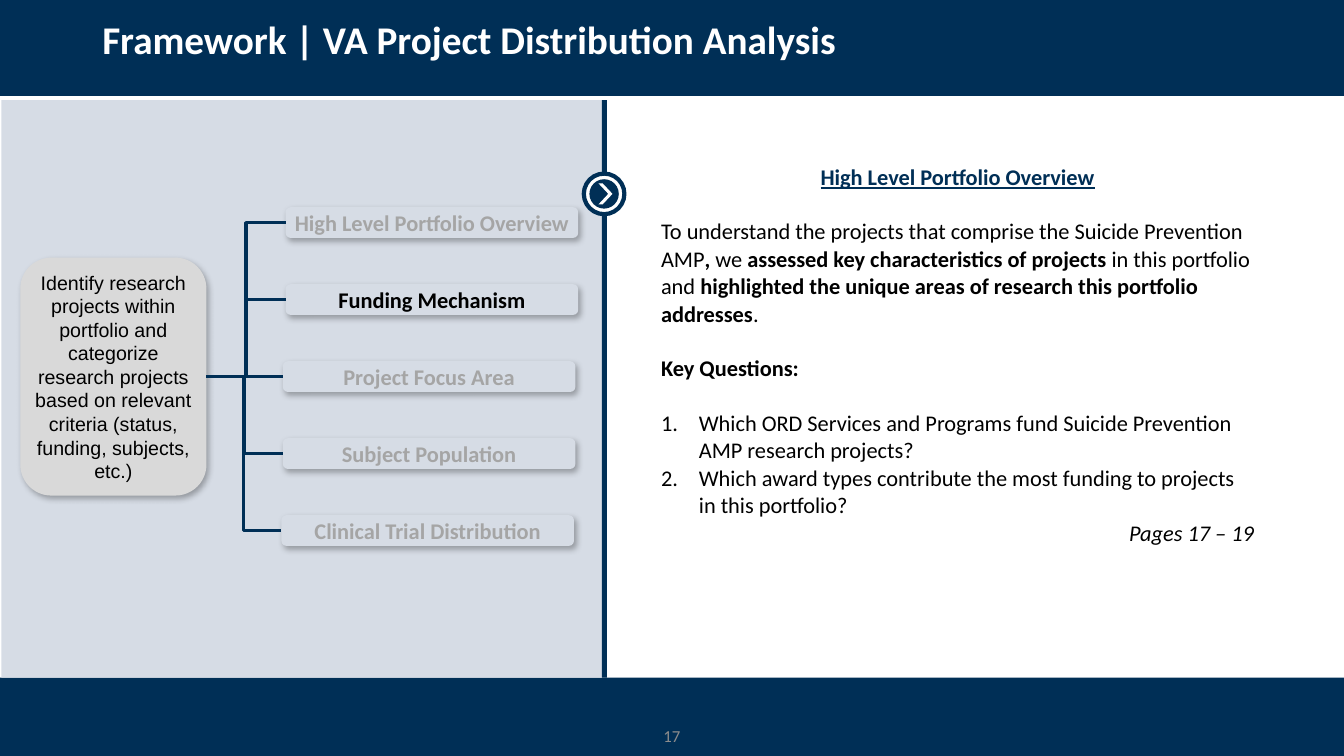
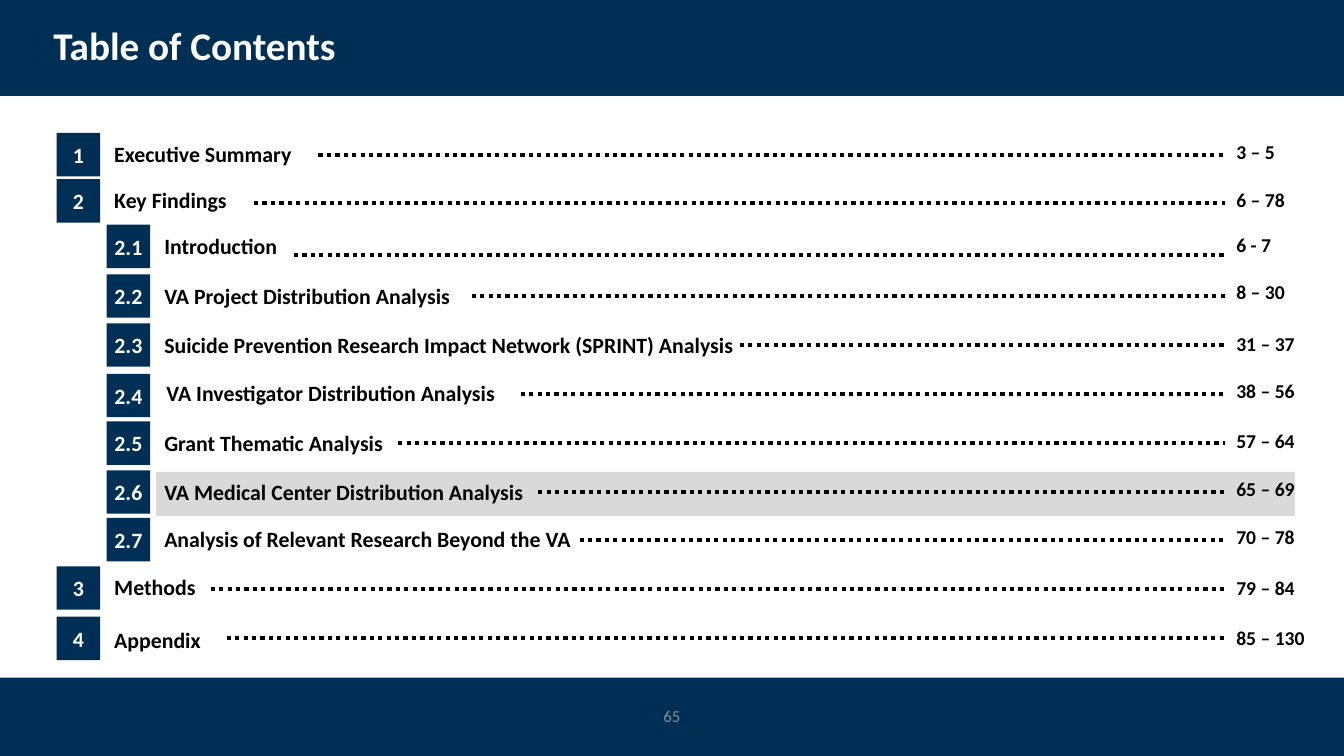
from dataclasses import dataclass
from typing import NamedTuple

from lxml.etree import SubElement
from pptx import Presentation
from pptx.dml.color import RGBColor as RGB
from pptx.enum.dml import MSO_LINE as Dash
from pptx.enum.shapes import MSO_CONNECTOR as Link, MSO_SHAPE as Kind
from pptx.enum.text import MSO_ANCHOR as Anchor, PP_ALIGN as Align
from pptx.oxml.ns import qn
from pptx.util import Pt


@dataclass(frozen=True)
class Theme:
    navy: str = "002F56"
    pale: str = "D6DCE5"
    gray: str = "D9D9D9"
    faded: str = "A5A5A5"
    muted: str = "8C8C8C"
    white: str = "FFFFFF"
    black: str = "000000"
    font: str = "Calibri"
    plain: str = "Arial"
    title: float = 28
    body: float = 16
    entry: float = 15.6
    note: float = 14
    foot: float = 12


class Row(NamedTuple):
    """One contents line; the last four values are offsets from its top."""
    mark: str
    label: str
    pages: str
    top: float
    start: float
    rule: float = 15.5
    page: float = 1.5
    dx: float = 0
    dy: float = 0


ROWS = [
    Row("1", "Executive Summary", "3 – 5", 95, 227.5),
    Row("2", "Key Findings", "6 – 78", 128, 181.5, 17, 2.5),
    Row("2.1", "Introduction", "6 - 7", 160.5, 210, 21.5, 2.5),
    Row("2.2", "VA Project Distribution Analysis", "8 – 30", 196, 337, page=0.5),
    Row("2.3", "Suicide Prevention Research Impact Network (SPRINT) Analysis",
        "31 – 37", 231, 528.5, page=2.5),
    Row("2.4", "VA Investigator Distribution Analysis", "38 – 56", 267, 372,
        14.5, 0, 1.5, -1.5),
    Row("2.5", "Grant Thematic Analysis", "57 – 64", 301, 284.5),
    Row("2.6", "VA Medical Center Distribution Analysis", "65 – 69", 336, 384.5,
        page=1),
    Row("2.7", "Analysis of Relevant Research Beyond the VA", "70 – 78", 370, 414),
    Row("3", "Methods", "79 – 84", 404.5, 150.5, 16, 3.5),
    Row("4", "Appendix", "85 – 130", 440.5, 162, dy=1.5, page=3),
]

TOPICS = [
    ("High Level Portfolio Overview", 204),
    ("Funding Mechanism", 204),
    ("Project Focus Area", 202),
    ("Subject Population", 202),
    ("Clinical Trial Distribution", 201),
]
ACTIVE = "Funding Mechanism"

INTRO = [
    ("To understand the projects that comprise the Suicide Prevention AMP", False),
    (", ", True),
    ("we ", False),
    ("assessed key characteristics of projects ", True),
    ("in this portfolio and ", False),
    ("highlighted the unique areas of research this portfolio addresses", True),
    (".", False),
]
ASKS = [
    "Which ORD Services and Programs fund Suicide Prevention AMP research projects?",
    "Which award types contribute the most funding to projects in this portfolio?",
]


class Deck:
    def __init__(self, theme):
        self.theme = theme
        self.file = Presentation()
        self.file.slide_width, self.file.slide_height = Pt(960), Pt(540)

    def start(self, title, left, top, number, foot):
        """Add a slide with its bands, title and page number."""
        t = self.theme
        self.slide = self.file.slides.add_slide(self.file.slide_layouts[6])
        self.shape(0, 0, 960, 68.5, t.navy)
        self.shape(0, 484, 960, 56, t.navy)
        para = self.text(left, top, 828, 53, title, t.title, t.white, bold=True,
                         anchor=Anchor.MIDDLE)
        para.line_spacing = 0.9
        self.text(372, foot, 216, 29, number, t.foot, t.muted,
                  align=Align.CENTER, anchor=Anchor.MIDDLE)

    def shape(self, x, y, w, h, fill, kind=Kind.RECTANGLE, edge=None):
        item = self.slide.shapes.add_shape(kind, Pt(x), Pt(y), Pt(w), Pt(h))
        item.shadow.inherit = False
        item.fill.solid()
        item.fill.fore_color.rgb = RGB.from_string(fill)
        if edge:
            item.line.color.rgb = RGB.from_string(edge)
            item.line.width = Pt(3)
        else:
            item.line.fill.background()
        return item

    def card(self, x, y, w, h, fill):
        """Add a rounded box with a soft shadow."""
        item = self.shape(x, y, w, h, fill, Kind.ROUNDED_RECTANGLE)
        effects = item._element.spPr.find(qn("a:effectLst"))
        shade = SubElement(effects, qn("a:outerShdw"), blurRad=str(Pt(4.5)),
                           dist=str(Pt(2.6)), dir=str(53 * 60000), rotWithShape="0")
        tint = SubElement(shade, qn("a:srgbClr"), val=self.theme.black)
        SubElement(tint, qn("a:alpha"), val="30000")
        return item

    def run(self, para, text, size, color, bold=False, font=None):
        run = para.add_run()
        run.text = text
        run.font.name = font or self.theme.font
        run.font.size = Pt(size)
        run.font.bold = bold
        run.font.color.rgb = RGB.from_string(color)
        return run

    def label(self, item, text, size, color, bold=False, font=None,
              align=Align.CENTER, anchor=Anchor.MIDDLE, inset=None, wrap=True):
        """Put one paragraph into a shape."""
        frame = item.text_frame
        frame.word_wrap = wrap
        frame.vertical_anchor = anchor
        if inset is not None:
            frame.margin_left = frame.margin_right = Pt(inset)
            frame.margin_top = frame.margin_bottom = Pt(inset)
        para = frame.paragraphs[0]
        para.alignment = align
        self.run(para, text, size, color, bold, font)
        return para

    def text(self, x, y, w, h, text, size, color, bold=False,
             align=Align.LEFT, anchor=Anchor.TOP, inset=None):
        box = self.slide.shapes.add_textbox(Pt(x), Pt(y), Pt(w), Pt(h))
        return self.label(box, text, size, color, bold, align=align,
                          anchor=anchor, inset=inset)

    def line(self, x1, y1, x2, y2, color, width, kind=Link.STRAIGHT, dash=None):
        item = self.slide.shapes.add_connector(kind, Pt(x1), Pt(y1), Pt(x2), Pt(y2))
        item.line.color.rgb = RGB.from_string(color)
        item.line.width = Pt(width)
        if dash:
            item.line.dash_style = dash
        SubElement(item._element.spPr, qn("a:effectLst"))
        return item

    def join(self, root, leaf):
        """Link the right side of root to the left side of leaf."""
        y1 = (root.top + root.height / 2) / Pt(1)
        y2 = (leaf.top + leaf.height / 2) / Pt(1)
        kind = Link.STRAIGHT if y1 == y2 else Link.ELBOW
        link = self.line((root.left + root.width) / Pt(1), y1, leaf.left / Pt(1), y2,
                         self.theme.navy, 2.25, kind)
        link.begin_connect(root, 3)
        link.end_connect(leaf, 1)

    def cell(self, x, y, w, h):
        """Add a clear table of one cell and return its text frame."""
        table = self.slide.shapes.add_table(1, 1, Pt(x), Pt(y), Pt(w), Pt(h)).table
        table.first_row = table.horz_banding = False
        cell = table.cell(0, 0)
        cell.fill.background()
        return cell.text_frame


def number(para):
    props = para._p.get_or_add_pPr()
    props.set("marL", str(Pt(27)))
    props.set("indent", str(-Pt(27)))
    SubElement(props, qn("a:buAutoNum"), type="arabicPeriod")


def tree(deck):
    t = deck.theme
    leaves = []
    for i, (name, x) in enumerate(TOPICS):
        leaf = deck.card(x, 148 + 55 * i, 209, 22, t.pale)
        color = t.black if name == ACTIVE else t.faded
        deck.label(leaf, name, t.body, color, bold=True, inset=0)
        leaves.append(leaf)
    root = deck.card(14.5, 184, 133, 170, t.gray)
    deck.label(root, "Identify research projects within portfolio and categorize "
               "research projects based on relevant criteria (status, funding, "
               "subjects, etc.)", t.note, t.black, font=t.plain, inset=3.6)
    for leaf in leaves:
        deck.join(root, leaf)


def badge(deck):
    t = deck.theme
    x, y = 431.5, 138.5
    deck.shape(x - 14.5, y - 14.5, 29, 29, t.white, Kind.OVAL, t.navy)
    deck.shape(x - 10.5, y - 10.5, 21, 21, t.navy, Kind.OVAL)
    arrow = deck.shape(x - 4, y - 7.5, 10, 15, t.white, Kind.CHEVRON)
    arrow.adjustments[0] = 0.7


def brief(deck):
    t = deck.theme
    gap = Pt(19.5)
    frame = deck.cell(465, 113.5, 438, 276)
    head = frame.paragraphs[0]
    head.alignment = Align.CENTER
    run = deck.run(head, "High Level Portfolio Overview", t.body, t.navy, True)
    run.font.underline = True
    intro = frame.add_paragraph()
    intro.space_before = gap
    for text, bold in INTRO:
        deck.run(intro, text, t.body, t.black, bold)
    keys = frame.add_paragraph()
    keys.space_before = keys.space_after = gap
    deck.run(keys, "Key Questions:", t.body, t.black, True)
    for ask in ASKS:
        para = frame.add_paragraph()
        number(para)
        deck.run(para, ask, t.body, t.black)
    pages = frame.add_paragraph()
    pages.alignment = Align.RIGHT
    deck.run(pages, "Pages 17 – 19", t.body, t.black).font.italic = True


def entry(deck, row):
    t = deck.theme
    left = 76.25 if "." in row.mark else 40.5
    chip = deck.shape(left, row.top, 31, 31, t.navy)
    deck.label(chip, row.mark, t.entry, t.white, bold=True, inset=5.6, wrap=False)
    deck.text(left + 35.5 + row.dx, row.top + row.dy, 440, 31, row.label,
              t.entry, t.black, bold=True, inset=5.6)
    y = row.top + row.rule
    deck.line(row.start, y, 875, y, t.black, 3, dash=Dash.ROUND_DOT)
    deck.text(876, row.top + row.page, 68, 24.5, row.pages, t.note, t.black, bold=True)


def main():
    t = Theme()
    deck = Deck(t)

    deck.start("Framework | VA Project Distribution Analysis", 66, 3.5, "17", 511)
    deck.shape(1, 71.5, 429, 412.5, t.pale)
    brief(deck)
    deck.shape(430, 71.5, 3.6, 412.5, t.navy)
    badge(deck)
    tree(deck)

    deck.start("Table of Contents", 31, 8, "65", 497)
    deck.shape(111.5, 337, 813.5, 31.5, t.gray)
    for row in ROWS:
        entry(deck, row)

    deck.file.save("out.pptx")


if __name__ == "__main__":
    main()
